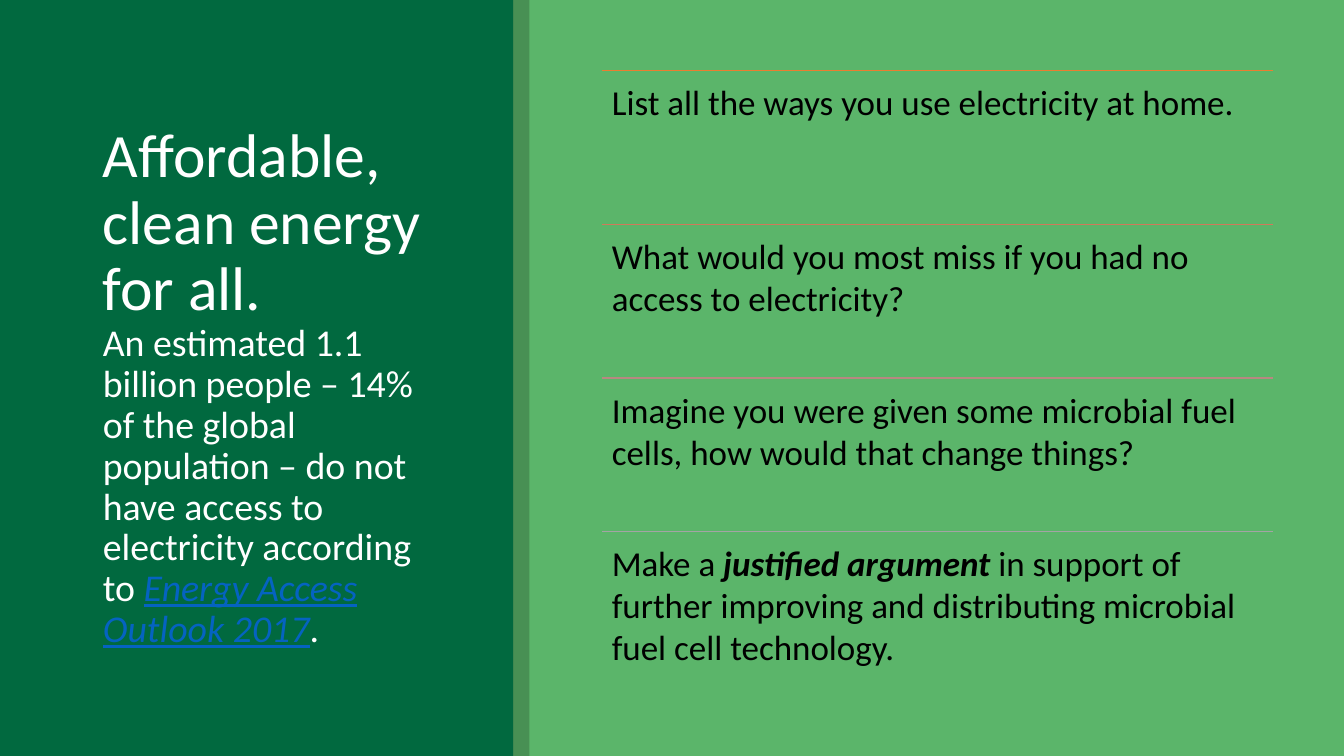
from dataclasses import dataclass

from lxml.etree import SubElement
from pptx import Presentation
from pptx.dml.color import RGBColor
from pptx.enum.shapes import MSO_CONNECTOR, MSO_SHAPE
from pptx.enum.text import MSO_ANCHOR, MSO_AUTO_SIZE, PP_ALIGN
from pptx.oxml.ns import qn
from pptx.util import Inches, Pt


@dataclass(frozen=True)
class Theme:
    font: str = "Calibri"
    background: str = "5BB56A"
    panel: str = "01693F"
    dark: str = "000000"
    light: str = "FFFFFF"
    link: str = "0563C1"
    rules: tuple = ("ED7D31", "D07A5B", "B88881", "A4A4A4")
    heading: int = 44
    intro: int = 27
    question: int = 25


def add_run(p, text, font, size, color, **style):
    r = p.add_run()
    r.text = text
    r.font.name = font
    r.font.size = Pt(size)
    r.font.color.rgb = RGBColor.from_string(color)
    for name, value in style.items():
        setattr(r.font, name, value)


class SlideBuilder:
    def __init__(self, slide, theme):
        self.s = slide
        self.theme = theme
        fill = slide.background.fill
        fill.solid()
        fill.fore_color.rgb = RGBColor.from_string(theme.background)

    def rect(self, x, y, w, h, color, alpha=None):
        sp = self.s.shapes.add_shape(
            MSO_SHAPE.RECTANGLE, Inches(x), Inches(y), Inches(w), Inches(h))
        sp.shadow.inherit = False
        sp.fill.solid()
        sp.fill.fore_color.rgb = RGBColor.from_string(color)
        sp.line.fill.background()
        if alpha is not None:
            clr = sp._element.spPr.find(".//" + qn("a:srgbClr"))
            SubElement(clr, qn("a:alpha"), val=str(alpha * 1000))
        return sp

    def rule(self, x, y, w, color):
        line = self.s.shapes.add_connector(
            MSO_CONNECTOR.STRAIGHT, Inches(x), Inches(y), Inches(x + w), Inches(y))
        line.line.color.rgb = RGBColor.from_string(color)
        line.line.width = Pt(1)
        SubElement(line._element.spPr, qn("a:effectLst"))

    def frame(self, sp, anchor, inset_y):
        tf = sp.text_frame
        tf.word_wrap = True
        tf.auto_size = MSO_AUTO_SIZE.NONE
        tf.vertical_anchor = anchor
        tf.margin_left = tf.margin_right = Inches(0.1)
        tf.margin_top = tf.margin_bottom = Inches(inset_y)
        p = tf.paragraphs[0]
        p.alignment = PP_ALIGN.LEFT
        return p

    def title(self, x, y, w, h, heading, intro):
        t = self.theme
        sp = self.s.shapes.title
        sp.left, sp.top, sp.width, sp.height = map(Inches, (x, y, w, h))
        p = self.frame(sp, MSO_ANCHOR.MIDDLE, 0.05)
        p.line_spacing = 0.9
        add_run(p, heading, t.font, t.heading, t.light)
        p.add_line_break()
        for text, color, style in intro:
            add_run(p, text, t.font, t.intro, color, **style)
        self.s.shapes._spTree.append(sp._element)

    def question(self, x, y, w, h, parts):
        t = self.theme
        sp = self.s.shapes.add_textbox(Inches(x), Inches(y), Inches(w), Inches(h))
        p = self.frame(sp, MSO_ANCHOR.TOP, 0.1)
        for text, style in parts:
            add_run(p, text, t.font, t.question, t.dark, **style)


def main():
    """Build the slide on affordable, clean energy."""
    theme = Theme()
    prs = Presentation()
    prs.slide_width, prs.slide_height = Inches(13.33), Inches(7.5)
    builder = SlideBuilder(prs.slides.add_slide(prs.slide_layouts[5]), theme)

    builder.rect(0, 0, 5.09, 7.5, theme.panel)
    builder.title(0.92, 0.89, 3.65, 5.91, "Affordable, clean energy for all.", [
        ("An estimated 1.1 billion people – 14% of the global population – "
         "do not have access to electricity according to ", theme.light, {}),
        ("Energy Access Outlook 2017", theme.link, {"italic": True, "underline": True}),
        (".", theme.light, {}),
    ])
    builder.rect(5.09, 0, 0.16, 7.5, theme.dark, alpha=20)

    questions = [
        [("List all the ways you use electricity at home.", {})],
        [("What would you most miss if you had no access to electricity?", {})],
        [("Imagine you were given some microbial fuel cells, "
          "how would that change things?", {})],
        [("Make a ", {}),
         ("justified argument ", {"bold": True, "italic": True}),
         ("in support of further improving and distributing "
          "microbial fuel cell technology.", {})],
    ]
    left, top, width, row = 5.97, 0.7, 6.66, 1.525
    for i, (parts, color) in enumerate(zip(questions, theme.rules)):
        y = top + i * row
        builder.rule(left, y, width, color)
        builder.question(left, y, width, row, parts)

    prs.save("out.pptx")


if __name__ == "__main__":
    main()
